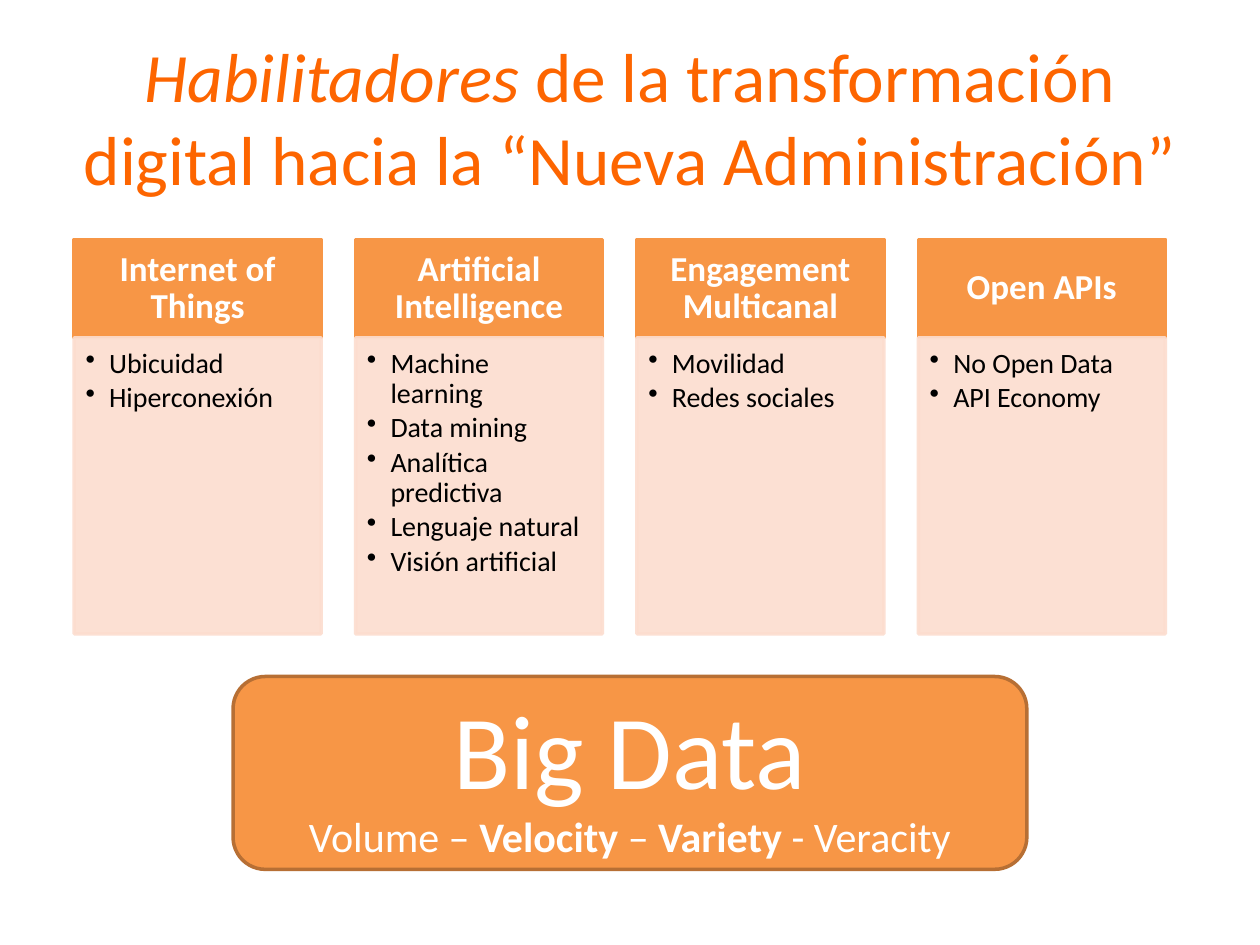
from dataclasses import dataclass

from lxml import etree
from pptx import Presentation
from pptx import util as u
from pptx.dml.color import RGBColor
from pptx.enum import shapes, text
from pptx.oxml import ns

Pt = u.Pt


@dataclass(frozen=True)
class Theme:
    font: str = "Calibri"
    title: str = "FD6500"
    accent: str = "F79646"
    accent_edge: str = "B76F34"
    panel: str = "FCDDCF"
    light: str = "FFFFFF"
    dark: str = "000000"
    title_size: float = 39.6
    heading_size: float = 20
    item_size: float = 16
    base_size: float = 60
    detail_size: float = 24
    line_width: float = 2
    panel_opacity: int = 90


THEME = Theme()

ENABLERS = [
    ("Internet of Things", ["Ubicuidad", "Hiperconexión"]),
    ("Artificial Intelligence", ["Machine learning", "Data mining", "Analítica predictiva",
                                 "Lenguaje natural", "Visión artificial"]),
    ("Engagement Multicanal", ["Movilidad", "Redes sociales"]),
    ("Open APIs", ["No Open Data", "API Economy"]),
]
COLUMN_LEFT, COLUMN_PITCH, COLUMN_WIDTH = 42.4, 160.8, 141.1
HEADING_TOP, HEADING_HEIGHT, PANEL_HEIGHT = 136.8, 56.2, 169.2


def style_runs(paragraph, size, color, bold=False):
    for run in paragraph.runs:
        run.font.name = THEME.font
        run.font.size = Pt(size)
        run.font.bold = bold
        run.font.color.rgb = RGBColor.from_string(color)


def add_runs(paragraph, *pieces):
    for piece in pieces:
        paragraph.add_run().text = piece
    paragraph.alignment = text.PP_ALIGN.CENTER
    return paragraph.runs


def set_frame(frame, anchor, margins=(7.2, 3.6, 7.2, 3.6)):
    frame.word_wrap = True
    frame.vertical_anchor = anchor
    (frame.margin_left, frame.margin_top,
     frame.margin_right, frame.margin_bottom) = map(Pt, margins)


def add_box(slide, preset, bounds, fill, edge):
    box = slide.shapes.add_shape(preset, *map(Pt, bounds))
    box.shadow.inherit = False
    box.fill.solid()
    box.fill.fore_color.rgb = RGBColor.from_string(fill)
    box.line.color.rgb = RGBColor.from_string(edge)
    box.line.width = Pt(THEME.line_width)
    return box


def set_opacity(box, percent):
    """Apply the opacity to both the fill and the outline."""
    for color in box._element.spPr.iter(ns.qn("a:srgbClr")):
        etree.SubElement(color, ns.qn("a:alpha")).set("val", str(percent * 1000))


def add_bullet(paragraph, indent=13.5):
    properties = paragraph._p.get_or_add_pPr()
    properties.set("marL", str(Pt(indent)))
    properties.set("indent", str(-Pt(indent)))
    etree.SubElement(properties, ns.qn("a:buChar")).set("char", "•")


def add_title(slide):
    title = slide.shapes.add_textbox(Pt(36), Pt(21.6), Pt(648), Pt(90))
    set_frame(title.text_frame, text.MSO_ANCHOR.MIDDLE)
    paragraph = title.text_frame.paragraphs[0]
    emphasis, _ = add_runs(paragraph, "Habilitadores",
                           " de la transformación digital hacia la “Nueva Administración”")
    style_runs(paragraph, THEME.title_size, THEME.title)
    emphasis.font.italic = True


def add_heading(slide, left, label):
    heading = add_box(slide, shapes.MSO_SHAPE.RECTANGLE,
                      (left, HEADING_TOP, COLUMN_WIDTH, HEADING_HEIGHT),
                      THEME.accent, THEME.accent)
    frame = heading.text_frame
    set_frame(frame, text.MSO_ANCHOR.MIDDLE, (11.4, 6.5, 11.4, 6.5))
    frame.text = label
    paragraph = frame.paragraphs[0]
    paragraph.alignment = text.PP_ALIGN.CENTER
    paragraph.line_spacing = 0.9
    style_runs(paragraph, THEME.heading_size, THEME.light, bold=True)


def add_panel(slide, left, items):
    panel = add_box(slide, shapes.MSO_SHAPE.RECTANGLE,
                    (left, HEADING_TOP + HEADING_HEIGHT, COLUMN_WIDTH, PANEL_HEIGHT),
                    THEME.panel, THEME.panel)
    set_opacity(panel, THEME.panel_opacity)
    frame = panel.text_frame
    set_frame(frame, text.MSO_ANCHOR.TOP, (6.5, 6.5, 8.6, 10.1))
    frame.text = "\n".join(items)
    for paragraph in frame.paragraphs:
        add_bullet(paragraph)
        paragraph.level = 1
        paragraph.alignment = text.PP_ALIGN.LEFT
        paragraph.line_spacing = 0.9
        paragraph.space_after = Pt(2.4)
        style_runs(paragraph, THEME.item_size, THEME.dark)


def add_foundation(slide):
    foundation = add_box(slide, shapes.MSO_SHAPE.ROUNDED_RECTANGLE,
                         (133.2, 386.6, 453.6, 110.2), THEME.accent, THEME.accent_edge)
    frame = foundation.text_frame
    set_frame(frame, text.MSO_ANCHOR.MIDDLE)
    name, details = frame.paragraphs[0], frame.add_paragraph()
    add_runs(name, "Big Data")
    style_runs(name, THEME.base_size, THEME.light)
    runs = add_runs(details, "Volume – ", "Velocity", " – ", "Variety", " - Veracity")
    style_runs(details, THEME.detail_size, THEME.light)
    for stressed in runs[1::2]:
        stressed.font.bold = True


def main():
    deck = Presentation()
    deck.slide_width, deck.slide_height = Pt(720), Pt(540)
    slide = deck.slides.add_slide(deck.slide_layouts[6])
    add_title(slide)
    add_foundation(slide)
    for column, (label, items) in enumerate(ENABLERS):
        left = COLUMN_LEFT + column * COLUMN_PITCH
        add_heading(slide, left, label)
        add_panel(slide, left, items)
    deck.save("out.pptx")


if __name__ == "__main__":
    main()
